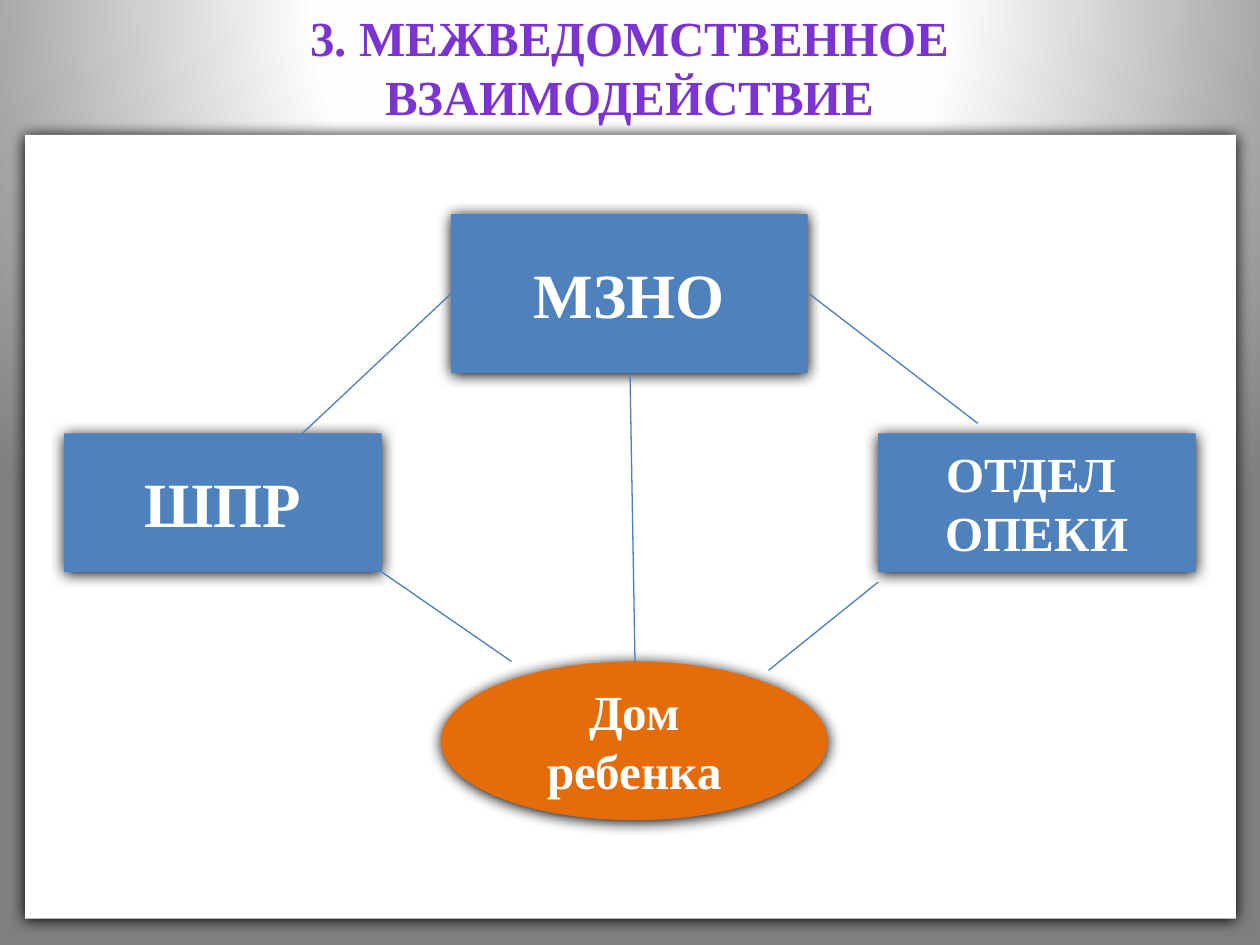
from lxml.etree import SubElement
from pptx import Presentation
from pptx.dml.color import RGBColor
from pptx.enum.shapes import MSO_CONNECTOR, MSO_SHAPE
from pptx.enum.text import MSO_ANCHOR, PP_ALIGN
from pptx.oxml import parse_xml
from pptx.oxml.ns import nsdecls, qn
from pptx.util import Inches, Pt

COLORS = {"title": "7B34D2", "panel": "FFFFFF", "agency": "4F81BD",
          "home": "E46C0A", "text": "FFFFFF", "line": "4B7EBC", "shadow": "000000"}
BACKDROP = [(0, "FFFFFF"), (40, "FEFEFE"), (100, "7F7F7F")]
TITLE = ["3. МЕЖВЕДОМСТВЕННОЕ ВЗАИМОДЕЙСТВИЕ"]
TITLE_PLACE = (0.5, 0.3, 9, 0.46)

# Shape, place, fill, paragraphs, text size
PARTS = [
    (MSO_SHAPE.RECTANGLE, (0.2, 1.07, 9.61, 6.22), "panel", [], 0),
    (MSO_SHAPE.OVAL, (3.5, 5.25, 3.07, 1.26), "home", ["Дом ребенка"], 28),
    (MSO_SHAPE.RECTANGLE, (3.58, 1.7, 2.83, 1.26), "agency", ["МЗНО"], 36),
    (MSO_SHAPE.RECTANGLE, (0.51, 3.44, 2.52, 1.1), "agency", ["ШПР"], 36),
    (MSO_SHAPE.RECTANGLE, (6.97, 3.44, 2.52, 1.1), "agency", ["ОТДЕЛ ", "ОПЕКИ"], 28),
]
LINKS = [
    (3.03, 4.54, 4.06, 5.25),
    (5, 2.96, 5.04, 5.25),
    (6.97, 4.62, 6.1, 5.32),
    (3.58, 2.33, 2.4, 3.44),
    (6.42, 2.33, 7.76, 3.36),
]


def color(name):
    return RGBColor.from_string(COLORS[name])


def write(box, lines, size, ink):
    frame = box.text_frame
    frame.word_wrap = True
    frame.vertical_anchor = MSO_ANCHOR.MIDDLE
    for index, line in enumerate(lines):
        para = frame.add_paragraph() if index else frame.paragraphs[0]
        para.alignment = PP_ALIGN.CENTER
        span = para.add_run()
        span.text = line
        style = {"name": "Times New Roman", "size": Pt(size), "bold": True}
        for key, value in style.items():
            setattr(span.font, key, value)
        span.font.color.rgb = color(ink)


def add_shadow(shape):
    shape.shadow.inherit = False
    effects = shape._element.spPr.find(qn("a:effectLst"))
    shadow = SubElement(effects, qn("a:outerShdw"), blurRad=str(Pt(8.5)),
                        dist=str(Pt(1)), dir="5400000", algn="t", rotWithShape="0")
    SubElement(shadow, qn("a:srgbClr"), val=COLORS["shadow"])


def paint_backdrop(page):
    stops = "".join(f'<a:gs pos="{pos * 1000}"><a:srgbClr val="{tint}"/></a:gs>'
                    for pos, tint in BACKDROP)
    page._element.cSld.insert(0, parse_xml(
        f'<p:bg {nsdecls("p", "a")}><p:bgPr><a:gradFill rotWithShape="1">'
        f'<a:gsLst>{stops}</a:gsLst><a:path path="circle">'
        '<a:fillToRect l="50000" t="-80000" r="50000" b="180000"/></a:path>'
        '</a:gradFill><a:effectLst/></p:bgPr></p:bg>'))


def main():
    deck = Presentation()
    deck.slide_width, deck.slide_height = Inches(10), Inches(7.5)
    page = deck.slides.add_slide(deck.slide_layouts[6])
    paint_backdrop(page)

    # Title
    title = page.shapes.add_textbox(*map(Inches, TITLE_PLACE))
    write(title, TITLE, 28, "title")

    # Panel and organisations
    for kind, place, fill, lines, size in PARTS:
        shape = page.shapes.add_shape(kind, *map(Inches, place))
        shape.fill.solid()
        shape.fill.fore_color.rgb = color(fill)
        shape.line.fill.background()
        add_shadow(shape)
        write(shape, lines, size, "text")

    # Links between organisations
    for ends in LINKS:
        link = page.shapes.add_connector(MSO_CONNECTOR.STRAIGHT, *map(Inches, ends))
        link.line.color.rgb = color("line")
        link.line.width = Pt(0.75)
        SubElement(link._element.spPr, qn("a:effectLst"))

    deck.save("out.pptx")


if __name__ == "__main__":
    main()
